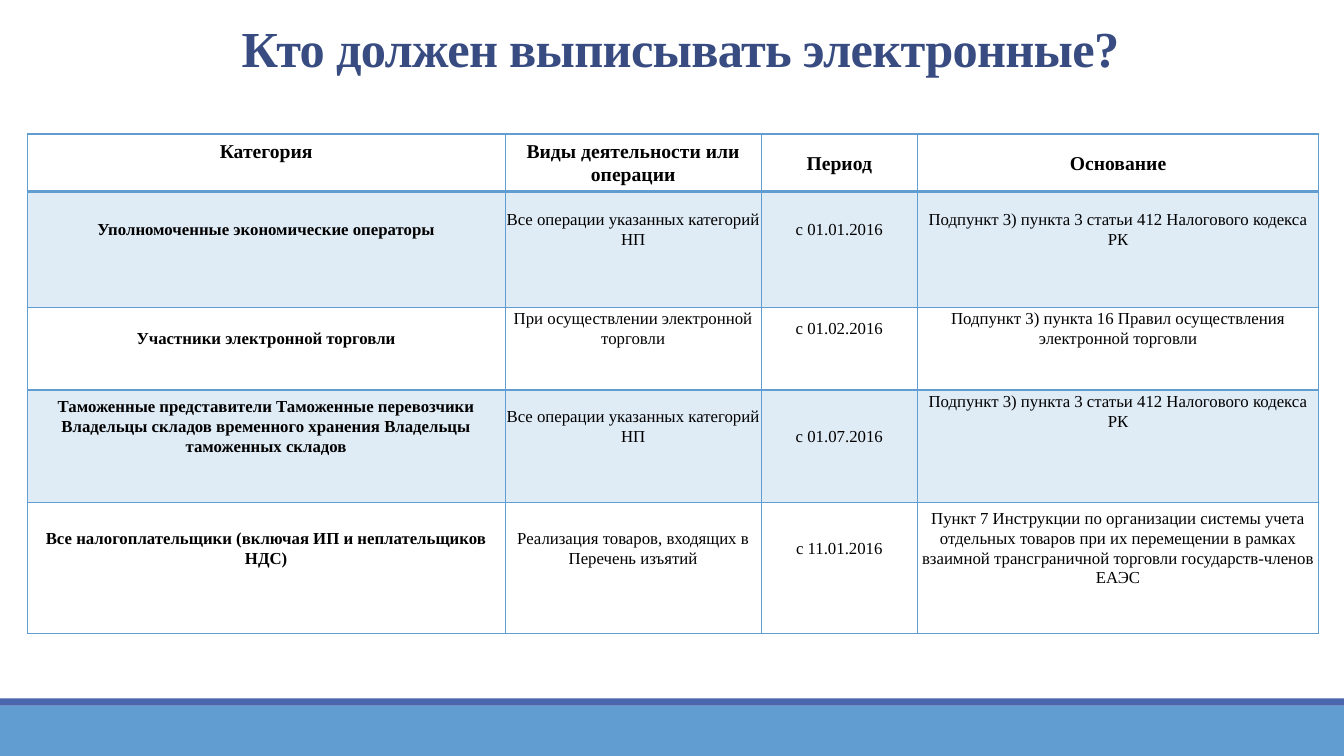
from dataclasses import dataclass

from lxml import etree
from pptx import Presentation
from pptx.dml.color import RGBColor
from pptx.enum.shapes import MSO_SHAPE
from pptx.enum.text import MSO_ANCHOR, PP_ALIGN
from pptx.oxml.ns import qn
from pptx.util import Inches, Pt

RECTANGLE = MSO_SHAPE.RECTANGLE
MIDDLE = MSO_ANCHOR.MIDDLE
CENTER = PP_ALIGN.CENTER


@dataclass(frozen=True)
class Theme:
    font: str = "Times New Roman"
    title: str = "384C81"
    text: str = "000000"
    light_blue: str = "629DD1"
    dark_blue: str = "4A66AC"
    title_size: int = 36
    header_size: int = 14
    body_size: int = 12


theme = Theme()


def write_text(frame, text, size, color=theme.text, bold=False,
               line_spacing=None, tracking=None):
    paragraph = frame.paragraphs[0]
    paragraph.alignment = CENTER
    paragraph.line_spacing = line_spacing
    run = paragraph.add_run()
    run.text = text
    run.font.name = theme.font
    run.font.size = Pt(size)
    run.font.bold = bold
    run.font.color.rgb = RGBColor.from_string(color)
    if tracking is not None:
        run.font._element.set("spc", str(int(tracking * 100)))


def add_border(cell, side, width):
    line = etree.SubElement(cell._tc.get_or_add_tcPr(), qn(f"a:ln{side}"), w=str(Pt(width)))
    fill = etree.SubElement(line, qn("a:solidFill"))
    etree.SubElement(fill, qn("a:srgbClr"), val=theme.light_blue)


prs = Presentation()
prs.slide_width = Inches(13.33)
prs.slide_height = Inches(7.5)
slide = prs.slides.add_slide(prs.slide_layouts[6])

# Footer bands
for top, height, color in [(7, 0.5, theme.light_blue), (6.93, 0.07, theme.dark_blue)]:
    band = slide.shapes.add_shape(RECTANGLE, 0, Inches(top), prs.slide_width, Inches(height))
    band.shadow.inherit = False
    band.fill.solid()
    band.fill.fore_color.rgb = RGBColor.from_string(color)
    band.line.fill.background()

# Each cell: text and the free space kept below it, in inches
rows = [
    (0.57, [("Категория", 0.24),
            ("Виды деятельности или операции", 0),
            ("Период", 0),
            ("Основание", 0)]),
    (1.15, [("Уполномоченные экономические операторы", 0.4),
            ("Все операции указанных категорий НП", 0.4),
            ("с 01.01.2016", 0.4),
            ("Подпункт 3) пункта 3 статьи 412 Налогового кодекса РК", 0.4)]),
    (0.82, [("Участники электронной торговли", 0.2),
            ("При осуществлении электронной торговли", 0.4),
            ("с 01.02.2016", 0.4),
            ("Подпункт 3) пункта 16 Правил осуществления электронной торговли", 0.4)]),
    (1.11, [("Таможенные представители Таможенные перевозчики Владельцы складов "
             "временного хранения Владельцы таможенных складов", 0.4),
            ("Все операции указанных категорий НП", 0.4),
            ("с 01.07.2016", 0.2),
            ("Подпункт 3) пункта 3 статьи 412 Налогового кодекса РК", 0.7)]),
    (1.3, [("Все налогоплательщики (включая ИП и неплательщиков НДС)", 0.4),
           ("Реализация товаров, входящих в Перечень изъятий", 0.4),
           ("с 11.01.2016", 0.4),
           ("Пункт 7 Инструкции по организации системы учета отдельных товаров при их "
            "перемещении в рамках взаимной трансграничной торговли государств-членов ЕАЭС", 0.4)]),
]
column_widths = [4.74, 2.54, 1.55, 3.98]
inset = 0.01

table = slide.shapes.add_table(
    len(rows), len(column_widths), Inches(0.27), Inches(1.33),
    Inches(sum(column_widths)), Inches(sum(height for height, _ in rows))).table
table.first_row = False
table.horz_banding = False
for column, width in zip(table.columns, column_widths):
    column.width = Inches(width)

for r, (height, entries) in enumerate(rows):
    table.rows[r].height = Inches(height)
    is_header = r == 0
    for c, (text, space_below) in enumerate(entries):
        cell = table.cell(r, c)
        cell.vertical_anchor = MIDDLE
        cell.margin_left = cell.margin_right = cell.margin_top = Inches(inset)
        cell.margin_bottom = Inches(inset + space_below)
        write_text(cell.text_frame, text, bold=is_header or c == 0, line_spacing=1.07,
                   size=theme.header_size if is_header else theme.body_size)
        for side in "LRTB":
            under_header = (r, side) in [(0, "B"), (1, "T")]
            add_border(cell, side, 2 if under_header else 1)
        if r % 2:
            cell.fill.solid()
            cell.fill.fore_color.rgb = RGBColor.from_string(theme.light_blue)
            tint = cell._tc.tcPr.find(qn("a:solidFill")).find(qn("a:srgbClr"))
            etree.SubElement(tint, qn("a:alpha"), val="20000")
        else:
            cell.fill.background()

title = slide.shapes.add_textbox(Inches(2.2), Inches(0.12), Inches(9.1), Inches(0.71))
title.text_frame.word_wrap = True
write_text(title.text_frame, "Кто должен выписывать электронные?", size=theme.title_size,
           color=theme.title, bold=True, tracking=-0.5)

prs.save("out.pptx")
